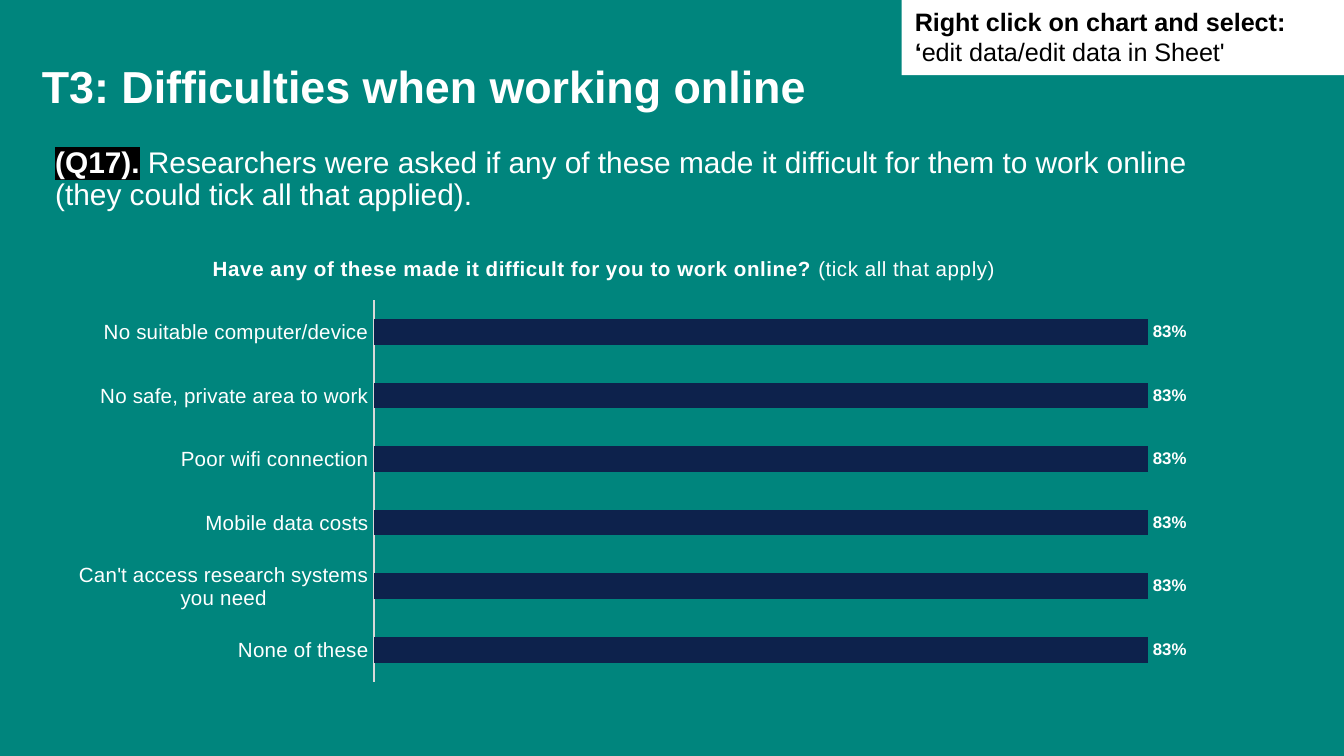
from dataclasses import dataclass

from lxml import etree
from pptx import Presentation
from pptx import util as u
from pptx.chart.data import CategoryChartData
from pptx.dml.color import RGBColor
from pptx.enum import chart as charts, shapes, text
from pptx.oxml import parse_xml
from pptx.oxml.ns import nsdecls, qn


@dataclass(frozen=True)
class Theme:
    font: str = "Arial"
    teal: str = "00857D"
    navy: str = "0D224C"
    white: str = "FFFFFF"
    black: str = "000000"
    axis: str = "D9D9D9"
    title_size: float = 24
    body_size: float = 16
    note_size: float = 13.5
    chart_size: float = 11
    label_size: float = 9


theme = Theme()


def style_font(font, size, color, bold=False):
    font.name = theme.font
    font.size = u.Pt(size)
    font.bold = bold
    font.color.rgb = RGBColor.from_string(color)


def add_run(paragraph, wording, size, color, bold=False):
    run = paragraph.add_run()
    run.text = wording
    style_font(run.font, size, color, bold)
    return run


presentation = Presentation()
presentation.slide_width = u.Cm(25.4)
presentation.slide_height = u.Cm(14.29)
slide = presentation.slides.add_slide(presentation.slide_layouts[1])

# Background
slide.background.fill.solid()
slide.background.fill.fore_color.rgb = RGBColor.from_string(theme.teal)

# Title
title = slide.shapes.title
title.left, title.top, title.width, title.height = u.Cm(0.79), u.Cm(1.15), u.Cm(18.11), u.Cm(0.94)
frame = title.text_frame
frame.margin_left = frame.margin_top = frame.margin_right = frame.margin_bottom = 0
frame.auto_size = text.MSO_AUTO_SIZE.NONE
frame.vertical_anchor = text.MSO_ANCHOR.MIDDLE
paragraph = frame.paragraphs[0]
paragraph.alignment = text.PP_ALIGN.LEFT
add_run(paragraph, "T3: Difficulties when working online", theme.title_size, theme.white, True)

# Question text
body = slide.placeholders[1]
body.left, body.top, body.width, body.height = u.Cm(0.79), u.Cm(2.67), u.Cm(22.91), u.Cm(3.4)
frame = body.text_frame
frame.auto_size = text.MSO_AUTO_SIZE.NONE
frame.vertical_anchor = text.MSO_ANCHOR.TOP
paragraph = frame.paragraphs[0]
paragraph.line_spacing = 0.9
paragraph.space_before = u.Pt(0)
properties = paragraph._p.get_or_add_pPr()
properties.set("marL", "0")
properties.set("indent", "0")
etree.SubElement(properties, qn("a:buNone"))
number = add_run(paragraph, "(Q17).", theme.body_size, theme.white, True)
number._r.rPr.find(qn("a:solidFill")).addnext(parse_xml(
    f'<a:highlight {nsdecls("a")}><a:srgbClr val="{theme.black}"/></a:highlight>'))
add_run(paragraph, " Researchers were asked if any of these made it difficult for them "
        "to work online (they could tick all that applied).", theme.body_size, theme.white)

# Chart
difficulties = [
    "No suitable computer/device",
    "No safe, private area to work",
    "Poor wifi connection",
    "Mobile data costs",
    "Can't access research systems you need",
    "None of these",
]
data = CategoryChartData(number_format="0%")
data.categories = difficulties
data.add_series("Series 1", [0.83] * len(difficulties))
chart = slide.shapes.add_chart(
    charts.XL_CHART_TYPE.BAR_CLUSTERED, u.Cm(1.04), u.Cm(4.47), u.Cm(22.33), u.Cm(8.59), data).chart
style_font(chart.font, theme.chart_size, theme.white)
chart.has_legend = False

# Chart title
chart.has_title = True
paragraph = chart.chart_title.text_frame.paragraphs[0]
for wording, bold in [("Have any of these made it difficult for you to work online? ", True),
                      ("(tick all that apply)", False)]:
    run = add_run(paragraph, wording, theme.chart_size, theme.white, bold)
    run._r.rPr.set("spc", "20")

# Axes
category_axis = chart.category_axis
category_axis.reverse_order = True
category_axis.major_tick_mark = charts.XL_TICK_MARK.NONE
category_axis.format.line.color.rgb = RGBColor.from_string(theme.axis)
category_axis.format.line.width = u.Pt(0.75)
style_font(category_axis.tick_labels.font, theme.chart_size, theme.white)
value_axis = chart.value_axis
value_axis.minimum_scale = 0
value_axis.maximum_scale = 0.9
value_axis.has_major_gridlines = False
value_axis.visible = False

# Bars and their labels
plot = chart.plots[0]
plot.gap_width = 150
plot.vary_by_categories = False
series = plot.series[0]
series.format.fill.solid()
series.format.fill.fore_color.rgb = RGBColor.from_string(theme.navy)
labels = series.data_labels
labels.show_value = True
labels.number_format = "0%"
labels.number_format_is_linked = False
labels.position = charts.XL_LABEL_POSITION.OUTSIDE_END
style_font(labels.font, theme.label_size, theme.white, True)

# Places of the chart title and the plot, as shares of the chart
title_place = {"xMode": "edge", "yMode": "edge", "x": 0.13, "y": 0.03}
plot_place = {"layoutTarget": "inner", "xMode": "edge", "yMode": "edge",
              "x": 0.27, "y": 0.14, "w": 0.71, "h": 0.84}
title_element = chart.chart_title._element
plot_element = chart._chartSpace.chart.plotArea
for element, place in [(title_element, title_place), (plot_element, plot_place)]:
    for old_layout in element.findall(qn("c:layout")):
        element.remove(old_layout)
    layout = etree.Element(qn("c:layout"))
    manual = etree.SubElement(layout, qn("c:manualLayout"))
    for name, value in place.items():
        etree.SubElement(manual, qn("c:" + name)).set("val", str(value))
    element.insert(1 if element is title_element else 0, layout)

# Editing note
note = slide.shapes.add_shape(
    shapes.MSO_SHAPE.RECTANGLE, u.Cm(17.04), u.Cm(0), u.Cm(8.36), u.Cm(1.42))
note.shadow.inherit = False
note.fill.solid()
note.fill.fore_color.rgb = RGBColor.from_string(theme.white)
note.line.fill.background()
frame = note.text_frame
frame.word_wrap = True
frame.vertical_anchor = text.MSO_ANCHOR.TOP
paragraph = frame.paragraphs[0]
paragraph.alignment = text.PP_ALIGN.LEFT
add_run(paragraph, "Right click on chart and select: ‘", theme.note_size, theme.black, True)
add_run(paragraph, "edit data/edit data in Sheet'", theme.note_size, theme.black)

presentation.save("out.pptx")
